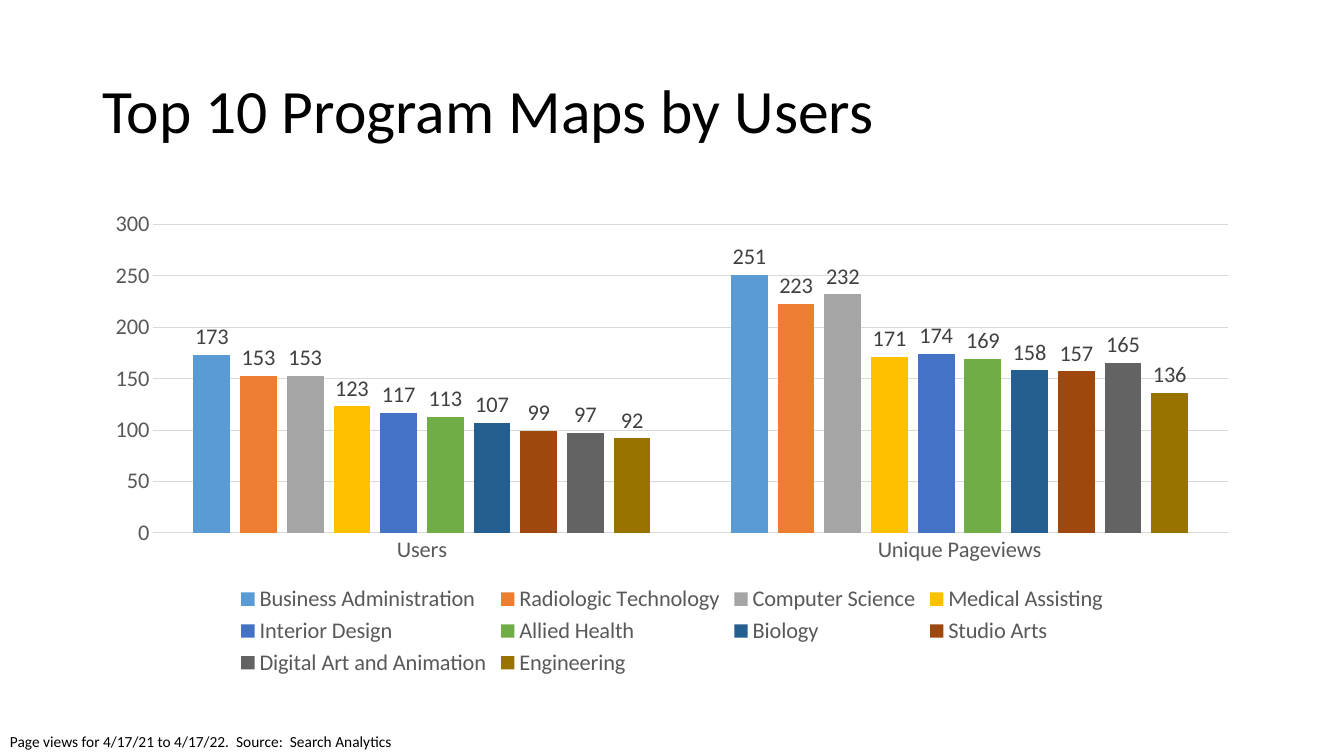
from pptx import Presentation
from pptx.chart.data import CategoryChartData
from pptx.dml.color import RGBColor
from pptx.enum.chart import XL_CHART_TYPE as ChartType
from pptx.enum.chart import XL_LABEL_POSITION as LabelPosition
from pptx.enum.chart import XL_LEGEND_POSITION as LegendPosition
from pptx.enum.chart import XL_TICK_MARK as TickMark
from pptx.enum.text import MSO_ANCHOR as Anchor
from pptx.util import Cm, Pt

FONT = "Calibri"
BLACK = RGBColor(0x00, 0x00, 0x00)
LABEL_GREY = RGBColor(0x40, 0x40, 0x40)
AXIS_GREY = RGBColor(0x59, 0x59, 0x59)
GRID_GREY = RGBColor(0xD9, 0xD9, 0xD9)

MEASURES = ["Users", "Unique Pageviews"]
PROGRAMS = [
    ("Business Administration", (173, 251), RGBColor(0x5B, 0x9B, 0xD5)),
    ("Radiologic Technology", (153, 223), RGBColor(0xED, 0x7D, 0x31)),
    ("Computer Science", (153, 232), RGBColor(0xA5, 0xA5, 0xA5)),
    ("Medical Assisting", (123, 171), RGBColor(0xFF, 0xC0, 0x00)),
    ("Interior Design", (117, 174), RGBColor(0x44, 0x72, 0xC4)),
    ("Allied Health", (113, 169), RGBColor(0x70, 0xAD, 0x47)),
    ("Biology", (107, 158), RGBColor(0x25, 0x5E, 0x91)),
    ("Studio Arts", (99, 157), RGBColor(0x9E, 0x48, 0x0E)),
    ("Digital Art and Animation", (97, 165), RGBColor(0x63, 0x63, 0x63)),
    ("Engineering", (92, 136), RGBColor(0x99, 0x73, 0x00)),
]


def style_font(font, size, color):
    font.name = FONT
    font.size = Pt(size)
    font.color.rgb = color


def style_line(line, color):
    line.color.rgb = color
    line.width = Pt(0.75)


def add_text(slide, text, left, top, width, height, size, anchor, wrap, spacing):
    frame = slide.shapes.add_textbox(left, top, width, height).text_frame
    frame.word_wrap = wrap
    frame.vertical_anchor = anchor
    paragraph = frame.paragraphs[0]
    paragraph.text = text
    paragraph.line_spacing = spacing
    style_font(paragraph.font, size, BLACK)


def style_axes(chart):
    for axis in (chart.category_axis, chart.value_axis):
        axis.major_tick_mark = TickMark.NONE
        axis.minor_tick_mark = TickMark.NONE
        style_font(axis.tick_labels.font, 16, AXIS_GREY)
    style_line(chart.category_axis.format.line, GRID_GREY)
    scale = chart.value_axis
    scale.minimum_scale, scale.maximum_scale, scale.major_unit = 0, 300, 50
    scale.format.line.fill.background()
    scale.has_major_gridlines = True
    style_line(scale.major_gridlines.format.line, GRID_GREY)


def style_legend(chart):
    chart.has_legend = True
    chart.legend.position = LegendPosition.BOTTOM
    chart.legend.include_in_layout = False
    style_font(chart.legend.font, 16, AXIS_GREY)


def style_columns(plot):
    plot.gap_width = 219
    plot.overlap = -27
    plot.vary_by_categories = False
    for series, (_, _, color) in zip(plot.series, PROGRAMS):
        series.format.fill.solid()
        series.format.fill.fore_color.rgb = color
        series.invert_if_negative = False
        labels = series.data_labels
        labels.show_value = True
        labels.position = LabelPosition.OUTSIDE_END
        style_font(labels.font, 16, LABEL_GREY)


def add_program_chart(slide, left, top, width, height):
    views = CategoryChartData()
    views.categories = MEASURES
    for program, values, _ in PROGRAMS:
        views.add_series(program, values)
    chart = slide.shapes.add_chart(
        ChartType.COLUMN_CLUSTERED, left, top, width, height, views
    ).chart
    chart.has_title = False
    style_font(chart.font, 16, BLACK)
    style_axes(chart)
    style_legend(chart)
    style_columns(chart.plots[0])


def main():
    deck = Presentation()
    deck.slide_width, deck.slide_height = Cm(33.87), Cm(19.05)
    slide = deck.slides.add_slide(deck.slide_layouts[6])
    add_text(slide, "Top 10 Program Maps by Users",
             Cm(2.33), Cm(1.01), Cm(29.21), Cm(3.68), 44, Anchor.MIDDLE, True, 0.9)
    add_text(slide, "Page views for 4/17/21 to 4/17/22.  Source:  Search Analytics",
             Cm(0), Cm(18.32), Cm(10.32), Cm(0.73), 11, Anchor.TOP, False, 1.0)
    add_program_chart(slide, Cm(2.33), Cm(5.07), Cm(29.21), Cm(12.09))
    deck.save("out.pptx")


if __name__ == "__main__":
    main()
